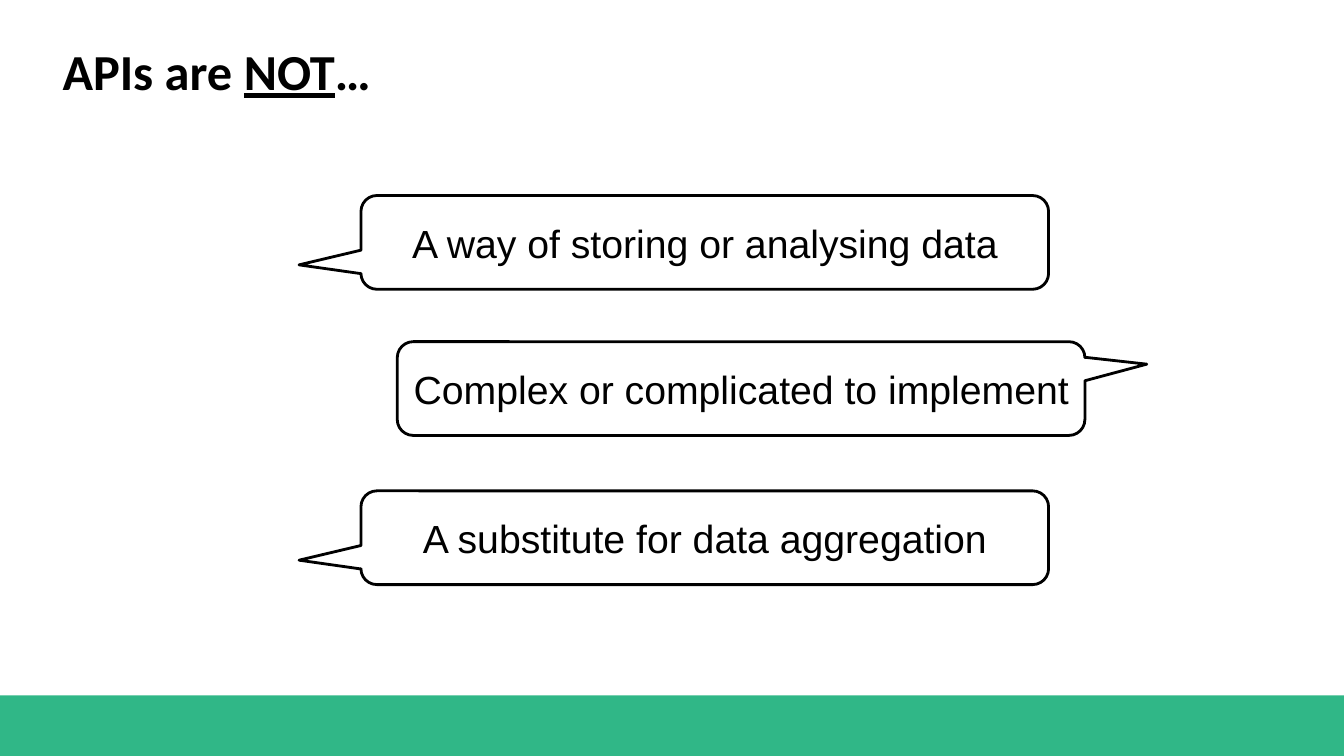
import pptx
import pptx.util
import pptx.dml.color
import pptx.enum.shapes
import pptx.enum.text
from dataclasses import dataclass

# Content: title runs (text, underlined) and callouts (text, side of tail, top)
TITLE = [("APIs are ", False), ("NOT", True), ("…", False)]
CALLOUTS = [
    ("A way of storing or analysing data", "left", 1.94),
    ("Complex or complicated to implement", "right", 3.39),
    ("A substitute for data aggregation", "left", 4.87),
]

# Geometry in inches
SLIDE_W, SLIDE_H = 13.33, 7.5
BAND_H = 0.08 * SLIDE_H
TITLE_BOX = (0.52, 0.3, 10.24, 0.93)
CALLOUT_W, CALLOUT_H = 6.82, 0.93
CALLOUT_LEFT = {"left": 3.58, "right": 3.94}
TAIL = {"left": (-0.59, 0.24, 0.17), "right": (0.59, -0.26, 0.17)}


@dataclass(frozen=True)
class Theme:
    ink: str = "000000"
    paper: str = "FFFFFF"
    band: str = "30B787"
    title_font: str = "Calibri"
    body_font: str = "Arial"
    title_size: int = 36
    body_size: int = 28
    outline: int = 2


THEME = Theme()


def rgb(value):
    return pptx.dml.color.RGBColor.from_string(value)


def inches(*values):
    return [pptx.util.Inches(v) for v in values]


def set_font(p, name, size, bold=False):
    p.font.name = name
    p.font.size = pptx.util.Pt(size)
    p.font.bold = bold
    p.font.color.rgb = rgb(THEME.ink)


def add_filled(slide, kind, box, fill):
    sp = slide.shapes.add_shape(kind, *inches(*box))
    sp.shadow.inherit = False
    sp.fill.solid()
    sp.fill.fore_color.rgb = rgb(fill)
    return sp


def add_band(slide):
    box = (0, SLIDE_H - BAND_H, SLIDE_W, BAND_H)
    sp = add_filled(slide, pptx.enum.shapes.MSO_SHAPE.RECTANGLE, box, THEME.band)
    sp.line.fill.background()


def fill_title(slide):
    sp = slide.shapes.title
    sp.left, sp.top, sp.width, sp.height = inches(*TITLE_BOX)
    tf = sp.text_frame
    tf.margin_left = tf.margin_top = tf.margin_right = tf.margin_bottom = pptx.util.Inches(0.1)
    tf.vertical_anchor = pptx.enum.text.MSO_ANCHOR.TOP
    tf.auto_size = pptx.enum.text.MSO_AUTO_SIZE.NONE
    p = tf.paragraphs[0]
    p.alignment = pptx.enum.text.PP_ALIGN.LEFT
    set_font(p, THEME.title_font, THEME.title_size, bold=True)
    for text, underlined in TITLE:
        r = p.add_run()
        r.text = text
        r.font.underline = underlined


def add_callout(slide, text, side, top):
    box = (CALLOUT_LEFT[side], top, CALLOUT_W, CALLOUT_H)
    kind = pptx.enum.shapes.MSO_SHAPE.ROUNDED_RECTANGULAR_CALLOUT
    sp = add_filled(slide, kind, box, THEME.paper)
    for i, value in enumerate(TAIL[side]):
        sp.adjustments[i] = value
    sp.line.color.rgb = rgb(THEME.ink)
    sp.line.width = pptx.util.Pt(THEME.outline)
    tf = sp.text_frame
    tf.word_wrap = True
    tf.vertical_anchor = pptx.enum.text.MSO_ANCHOR.MIDDLE
    p = tf.paragraphs[0]
    p.text = text
    p.alignment = pptx.enum.text.PP_ALIGN.CENTER
    set_font(p, THEME.body_font, THEME.body_size)


def main():
    prs = pptx.Presentation()
    prs.slide_width, prs.slide_height = inches(SLIDE_W, SLIDE_H)
    slide = prs.slides.add_slide(prs.slide_layouts.get_by_name("Title Only"))
    add_band(slide)
    fill_title(slide)
    for callout in CALLOUTS:
        add_callout(slide, *callout)
    prs.save("out.pptx")


if __name__ == "__main__":
    main()
